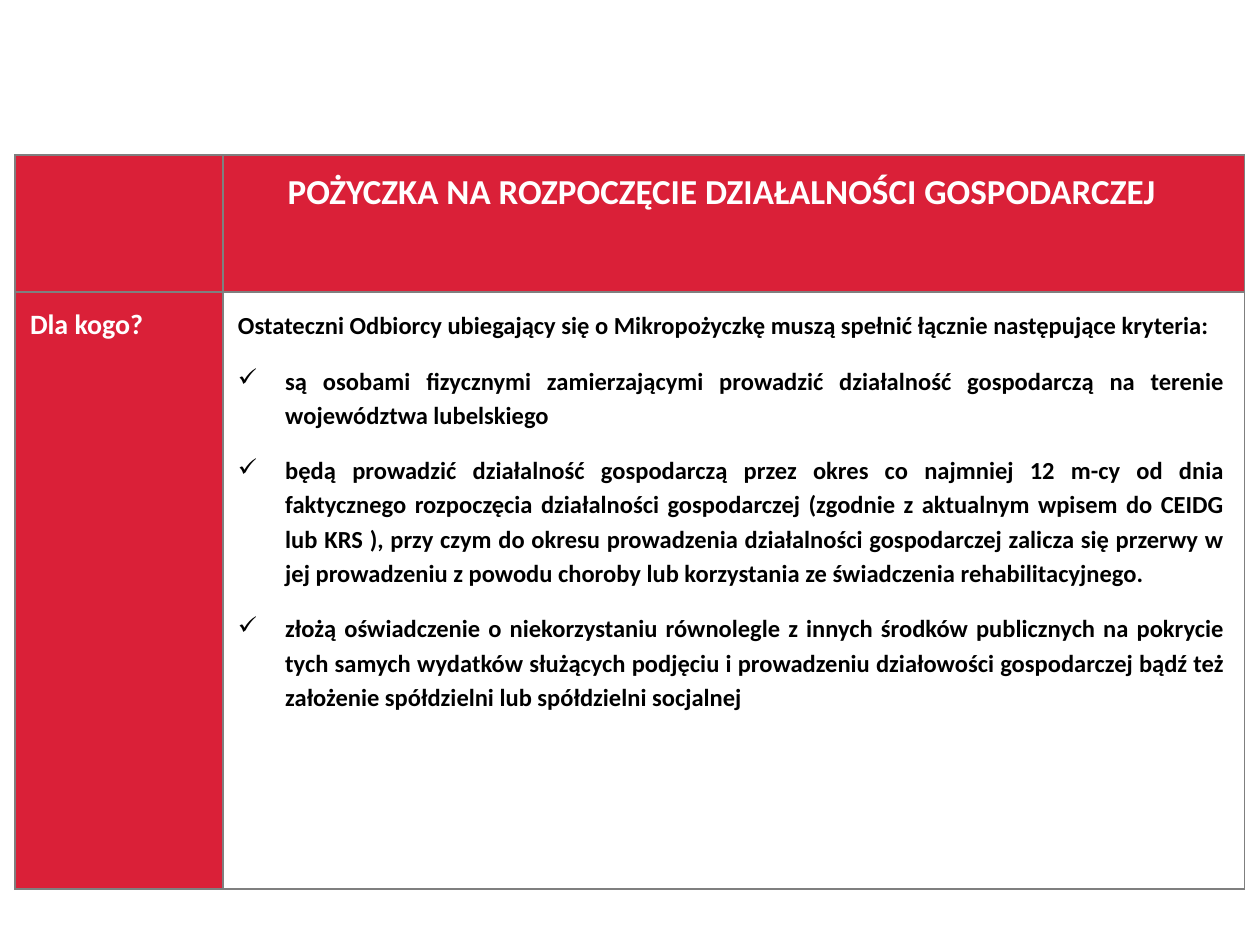
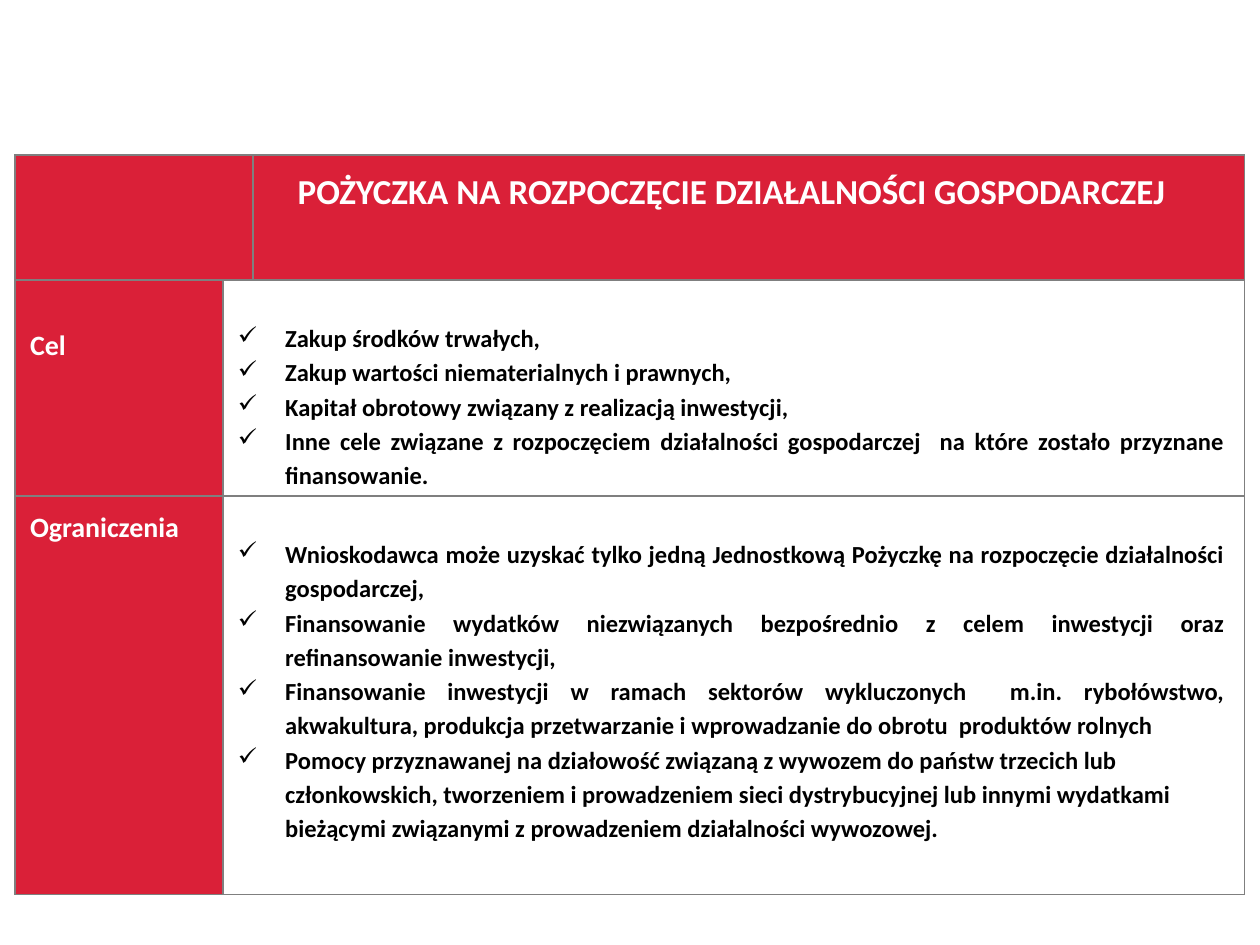
"""Builds two slides of tables that describe a start-up loan."""
from lxml.etree import SubElement
from pptx import Presentation
from pptx.dml.color import RGBColor
from pptx.enum.text import PP_ALIGN
from pptx.oxml.ns import qn
from pptx.util import Pt

RED = RGBColor(0xDA, 0x20, 0x38)
WHITE = RGBColor(0xFF, 0xFF, 0xFF)
BLACK = RGBColor(0x00, 0x00, 0x00)
GREY = "7F7F7F"
FONT = "Calibri"
LEFT, TOP = 8.6, 88.6
HEAD = "POŻYCZKA NA ROZPOCZĘCIE DZIAŁALNOŚCI GOSPODARCZEJ"
INTRO = "Ostateczni Odbiorcy ubiegający się o Mikropożyczkę muszą spełnić łącznie następujące kryteria:"
WHO = [
    "są osobami fizycznymi zamierzającymi prowadzić działalność gospodarczą na terenie województwa lubelskiego",
    "będą prowadzić działalność gospodarczą przez okres co najmniej 12 m-cy od dnia faktycznego rozpoczęcia "
    "działalności gospodarczej (zgodnie z aktualnym wpisem do CEIDG lub KRS ), przy czym do okresu prowadzenia "
    "działalności gospodarczej zalicza się przerwy w jej prowadzeniu z powodu choroby lub korzystania ze "
    "świadczenia rehabilitacyjnego.",
    "złożą oświadczenie o niekorzystaniu równolegle z innych środków publicznych na pokrycie tych samych "
    "wydatków służących podjęciu i prowadzeniu działowości gospodarczej bądź też założenie spółdzielni lub "
    "spółdzielni socjalnej",
]
GOALS = [
    "Zakup środków trwałych,",
    "Zakup wartości niematerialnych i prawnych,",
    "Kapitał obrotowy związany z realizacją inwestycji,",
    "Inne cele związane z rozpoczęciem działalności gospodarczej  na które zostało przyznane finansowanie.",
]
LIMITS = [
    "Wnioskodawca może uzyskać tylko jedną Jednostkową Pożyczkę na rozpoczęcie działalności gospodarczej,",
    "Finansowanie wydatków niezwiązanych bezpośrednio z celem inwestycji oraz refinansowanie inwestycji,",
    "Finansowanie inwestycji w ramach sektorów wykluczonych  m.in. rybołówstwo, akwakultura, produkcja "
    "przetwarzanie i wprowadzanie do obrotu  produktów rolnych",
    "Pomocy przyznawanej na działowość związaną z wywozem do państw trzecich lub członkowskich, tworzeniem "
    "i prowadzeniem sieci dystrybucyjnej lub innymi wydatkami bieżącymi związanymi z prowadzeniem "
    "działalności wywozowej.",
]


def add_grid(slide, top, cols, rows, header):
    """Add a bordered table with a red header row or a red label column."""
    frame = slide.shapes.add_table(len(rows), len(cols), Pt(LEFT), Pt(top), Pt(sum(cols)), Pt(sum(rows)))
    grid = frame.table
    grid.first_row = grid.horz_banding = False
    for col, width in zip(grid.columns, cols):
        col.width = Pt(width)
    for r, height in enumerate(rows):
        grid.rows[r].height = Pt(height)
        for c in range(len(cols)):
            cell = grid.cell(r, c)
            props = cell._tc.get_or_add_tcPr()
            for side in "LRTB":
                line = SubElement(props, qn(f"a:ln{side}"), w=str(Pt(1)))
                if header and r == 0 and (c, side) in ((1, "R"), (2, "L")):
                    SubElement(line, qn("a:noFill"))
                else:
                    paint = SubElement(line, qn("a:solidFill"))
                    SubElement(paint, qn("a:srgbClr"), val=GREY)
            cell.fill.solid()
            red = c == 0 or (header and r == 0)
            cell.fill.fore_color.rgb = RED if red else WHITE
    return grid


def write(cell, texts, size, color, align, top=5.8, gap=0, marks=()):
    """Fill a cell with bold text; marks lists the ticked paragraphs."""
    cell.margin_left, cell.margin_right = Pt(8.6), Pt(11.5)
    cell.margin_top, cell.margin_bottom = Pt(top), Pt(2)
    cell.text_frame.text = "\n".join(texts)
    for i, para in enumerate(cell.text_frame.paragraphs):
        para.alignment = align
        para.line_spacing = 1.15
        if i and gap:
            para.space_before = Pt(gap)
        if i in marks:
            props = para._p.get_or_add_pPr()
            props.set("marL", str(Pt(27)))
            props.set("indent", str(Pt(-27)))
            SubElement(props, qn("a:buChar"), char="✓")
        for run in para.runs:
            run.font.name, run.font.size, run.font.bold = FONT, Pt(size), True
            run.font.color.rgb = color


deck = Presentation()
deck.slide_width, deck.slide_height = Pt(720), Pt(540)
blank = deck.slide_layouts[6]
first, second = [deck.slides.add_slide(blank) for _ in range(2)]

who = add_grid(first, TOP, [118.8, 561.6, 22.3], [78.4, 341], True)
who.cell(1, 1).merge(who.cell(1, 2))
write(who.cell(1, 0), ["Dla kogo?"], 16, WHITE, PP_ALIGN.LEFT)
write(who.cell(1, 1), [INTRO] + WHO, 14, BLACK, PP_ALIGN.JUSTIFY, 8.5, 12, range(1, 4))

band = add_grid(second, TOP, [136, 538.6, 28.1], [71.3], True)
for grid in (who, band):
    title = grid.cell(0, 1)
    write(title, [HEAD], 20, WHITE, PP_ALIGN.CENTER)
    title.text_frame.paragraphs[0]._p.get_or_add_pPr().set("marL", str(Pt(11.5)))

terms = add_grid(second, TOP + 71.3, [118.8, 583.9], [123.4, 228], False)
for r, (label, top, items) in enumerate([("Cel", 25, GOALS), ("Ograniczenia", 5.8, LIMITS)]):
    write(terms.cell(r, 0), [label], 16, WHITE, PP_ALIGN.LEFT, top)
    write(terms.cell(r, 1), items, 14, BLACK, PP_ALIGN.JUSTIFY, 22.9, marks=range(4))
terms.cell(1, 1).text_frame.paragraphs[-1].alignment = PP_ALIGN.LEFT

deck.save("out.pptx")
